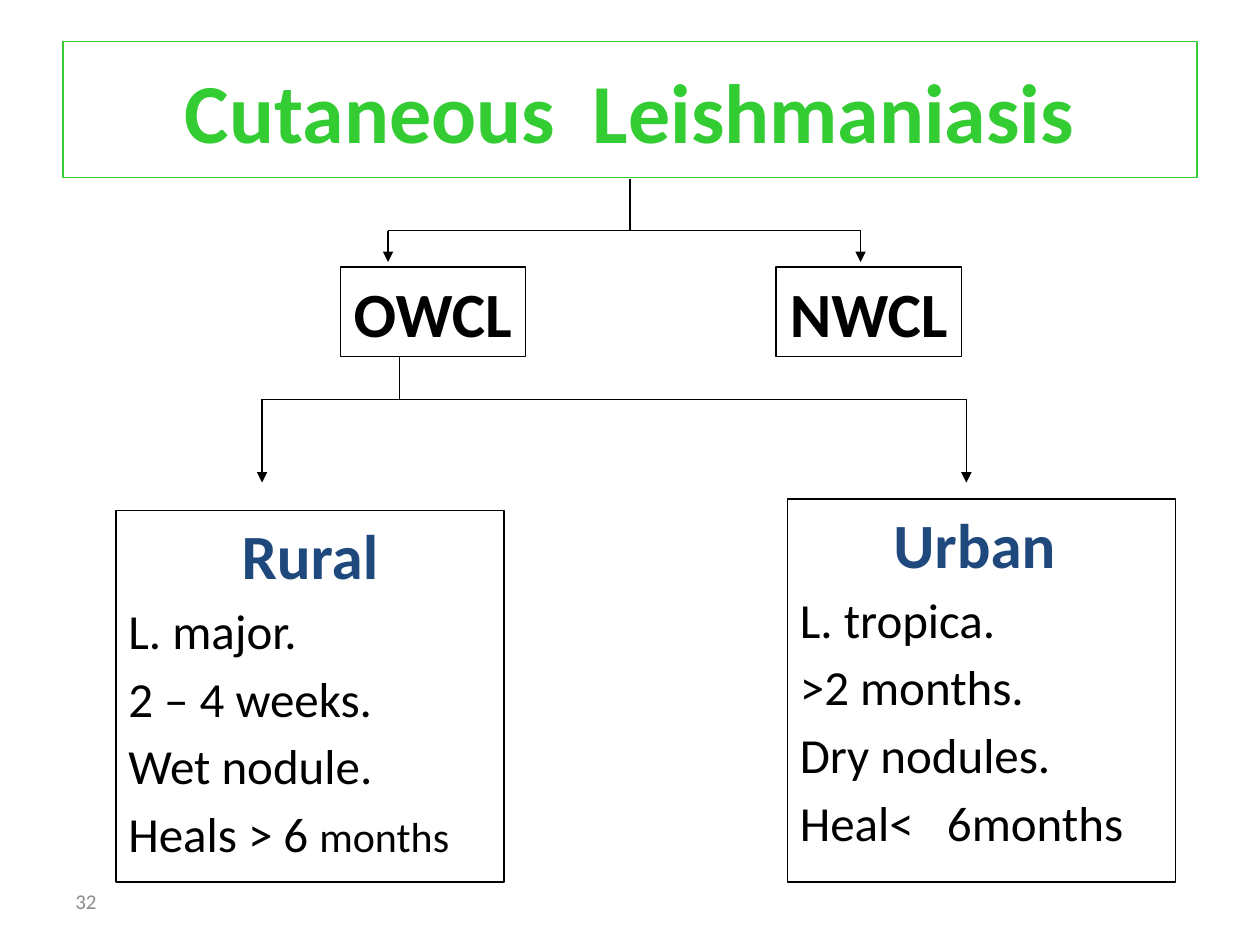
"""Build a slide that classifies cutaneous leishmaniasis as a tree."""
import pptx
import pptx.dml.color
import pptx.enum.shapes
import pptx.enum.text
import pptx.oxml
import pptx.oxml.ns
import pptx.util

Inches = pptx.util.Inches
Pt = pptx.util.Pt
ALIGN = pptx.enum.text.PP_ALIGN
ANCHOR = pptx.enum.text.MSO_ANCHOR
COLORS = {"green": "33CC33", "navy": "1F497D", "black": "000000", "gray": "8C8C8C"}
FONT = "Calibri"


def rgb(name):
    return pptx.dml.color.RGBColor.from_string(COLORS[name])


def style_span(span, size, color, bold=False):
    span.font.name = FONT
    span.font.size = Pt(size)
    span.font.bold = bold
    span.font.color.rgb = rgb(color)


def add_text(page, text, area, size, color, bold=False, align=ALIGN.CENTER, wrap=True):
    box = page.shapes.add_textbox(*map(Inches, area))
    frame = box.text_frame
    frame.word_wrap = wrap
    frame.vertical_anchor = ANCHOR.MIDDLE
    frame.text = text
    para = frame.paragraphs[0]
    para.alignment = align
    style_span(para.runs[0], size, color, bold)
    return box


def add_outline(box, color):
    box.line.color.rgb = rgb(color)
    box.line.width = Pt(0.75)


def add_framed_text(page, text, area, size, color, wrap=True):
    box = add_text(page, text, area, size, color, bold=True, wrap=wrap)
    add_outline(box, color)


def add_card(page, heading, items, area):
    box = add_text(page, heading, area, 36, "navy", bold=True)
    add_outline(box, "black")
    frame = box.text_frame
    frame.vertical_anchor = ANCHOR.TOP
    frame.paragraphs[0].space_before = Pt(2)
    for spans in items:
        para = frame.add_paragraph()
        para.alignment = ALIGN.LEFT
        para.space_before = Pt(5)
        for text, size in spans:
            span = para.add_run()
            span.text = text
            style_span(span, size, "black")


def add_line(page, start, end, arrow=False):
    line = page.shapes.add_connector(
        pptx.enum.shapes.MSO_CONNECTOR.STRAIGHT, *map(Inches, start + end))
    add_outline(line, "black")
    if arrow:
        head = pptx.oxml.parse_xml(
            f'<a:tailEnd {pptx.oxml.ns.nsdecls("a")} type="triangle"/>')
        line.line._get_or_add_ln().append(head)
    effects = pptx.oxml.parse_xml(f'<a:effectLst {pptx.oxml.ns.nsdecls("a")}/>')
    line._element.spPr.append(effects)


def add_fork(page, stem_x, top, bar_y, branch_xs, bottom):
    add_line(page, (stem_x, top), (stem_x, bar_y))
    add_line(page, (branch_xs[0], bar_y), (branch_xs[-1], bar_y))
    for x in branch_xs:
        add_line(page, (x, bar_y), (x, bottom), arrow=True)


def main():
    deck = pptx.Presentation()
    deck.slide_width, deck.slide_height = Inches(10), Inches(7.5)
    page = deck.slides.add_slide(deck.slide_layouts[6])

    add_text(page, "32", (0.5, 6.95, 2.33, 0.4), 12, "gray", align=ALIGN.LEFT)
    add_framed_text(page, "Cutaneous  Leishmaniasis", (0.5, 0.33, 9, 1.08), 48, "green")

    rural = [[("L. major.", 28)], [("2 – 4 weeks.", 28)], [("Wet nodule.", 28)],
             [("Heals > 6 ", 28), ("months", 24)]]
    urban = [[(text, 28)] for text in
             ("L. tropica.", ">2 months.", "Dry nodules.", "Heal<   6months")]
    add_card(page, "Rural", rural, (0.92, 4.05, 3.08, 2.95))
    add_card(page, "Urban ", urban, (6.25, 3.96, 3.08, 3.04))

    for name, left in (("OWCL", 2.7), ("NWCL", 6.16)):
        add_framed_text(page, name, (left, 2.12, 1.47, 0.71), 36, "black", wrap=False)

    add_fork(page, 5, 1.42, 1.83, (3.08, 6.83), 2.08)
    add_fork(page, 3.17, 2.83, 3.17, (2.08, 7.67), 3.83)
    deck.save("out.pptx")


if __name__ == "__main__":
    main()
